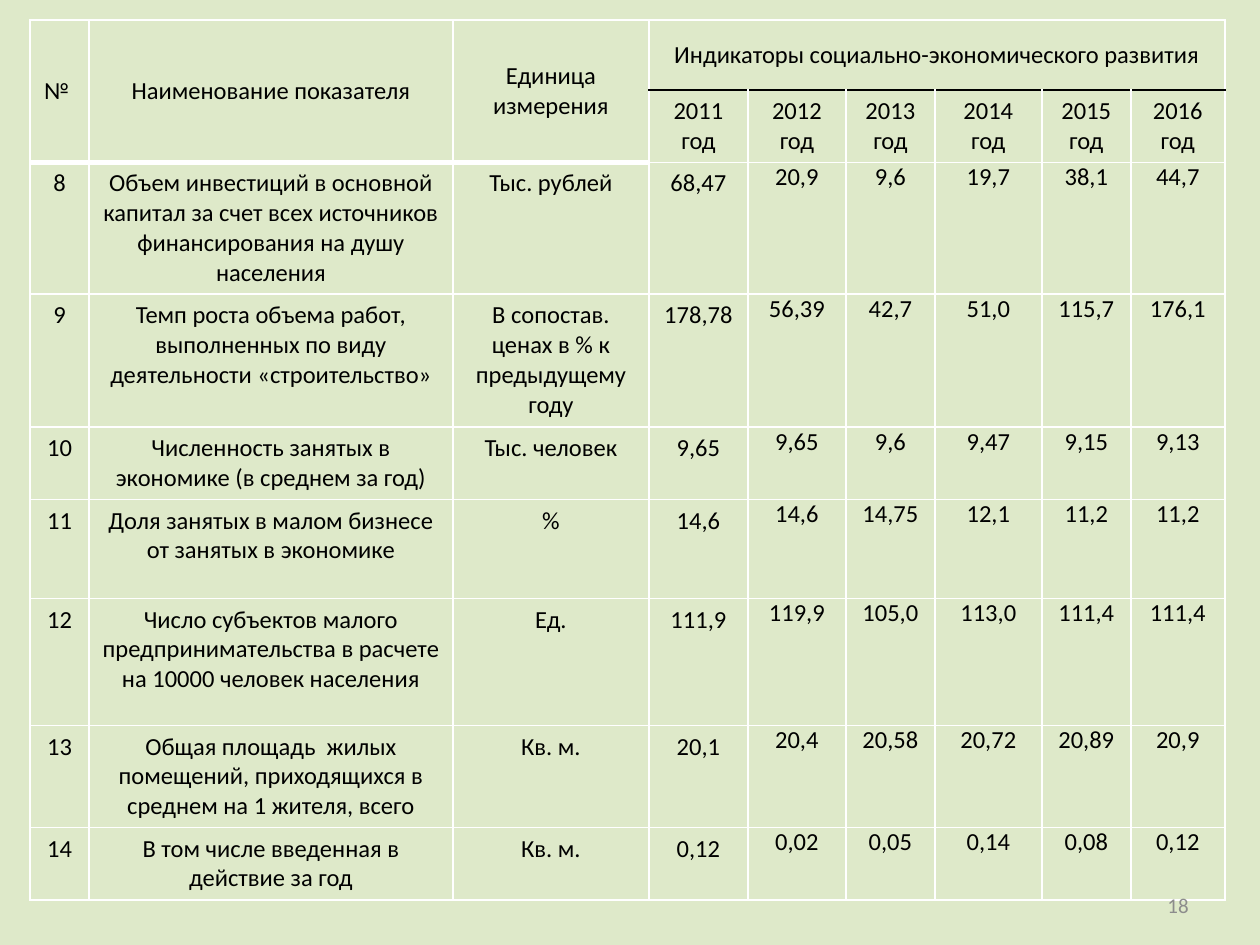
from lxml.etree import SubElement as Sub
from pptx import Presentation
from pptx.dml.color import RGBColor
from pptx.enum.text import MSO_ANCHOR as Anchor, PP_ALIGN as Align
from pptx.oxml.ns import qn
from pptx.util import Pt

PX = 914400 / 126
BACK, WHITE, BLACK, GREY = "DEE9C9", "FFFFFF", "000000", "8C8C8C"

HEADS = ["№ ", "Наименование показателя", "Единица измерения"]
GROUP = "Индикаторы социально-экономического развития"
YEARS = range(2011, 2017)
ROWS = [
    ("Объем инвестиций в основной капитал за счет всех источников "
     "финансирования на душу населения", "Тыс. рублей",
     "68,47 20,9 9,6 19,7 38,1 44,7"),
    ("Темп роста объема работ, выполненных по виду деятельности "
     "«строительство»", "В сопостав. ценах в % к предыдущему году",
     "178,78 56,39 42,7 51,0 115,7 176,1"),
    ("Численность занятых в экономике (в среднем за год)", "Тыс. человек",
     "9,65 9,65 9,6 9,47 9,15 9,13"),
    ("Доля занятых в малом бизнесе от занятых в экономике", "%",
     "14,6 14,6 14,75 12,1 11,2 11,2"),
    ("Число субъектов малого предпринимательства в расчете на 10000 "
     "человек населения", "Ед.", "111,9 119,9 105,0 113,0 111,4 111,4"),
    ("Общая площадь  жилых помещений, приходящихся в среднем на 1 жителя, "
     "всего", "Кв. м.", "20,1 20,4 20,58 20,72 20,89 20,9"),
    ("В том числе введенная в действие за год", "Кв. м.",
     "0,12 0,02 0,05 0,14 0,08 0,12"),
]
FIRST = 8
WIDTHS = [59, 364, 196, 99, 98, 89, 107, 89, 94]
HEIGHTS = [70, 72, 131, 133, 72, 99, 127, 102, 72]
LEFT, TOP = 30, 20


def px(n):
    return round(n * PX)


def color(code):
    return RGBColor.from_string(code)


def write(frame, text, size, code, align):
    para = frame.paragraphs[0]
    para.text = text
    para.alignment = align
    para.font.size = Pt(size)
    para.font.name = "Calibri"
    para.font.color.rgb = color(code)


def border(cell, side, code=WHITE, width=1):
    line = Sub(cell._tc.get_or_add_tcPr(), qn(f"a:ln{side}"), w=str(Pt(width)))
    Sub(Sub(line, qn("a:solidFill")), qn("a:srgbClr"), val=code)


def style(cell, row, col):
    """Draw the four borders, then clear the fill."""
    head, year = row < 2, col >= len(HEADS)
    border(cell, "L")
    border(cell, "R")
    border(cell, "T", BLACK if row == 1 and year else WHITE)
    border(cell, "B", BLACK if row == 0 and year else WHITE,
           3 if row == 0 and not year else 1)
    cell.fill.background()
    if not head and col > len(HEADS):
        cell.margin_left = cell.margin_right = px(9)
        cell.margin_top = cell.margin_bottom = 0
    if row == 0:
        cell.vertical_anchor = Anchor.MIDDLE


def build():
    deck = Presentation()
    deck.slide_width, deck.slide_height = px(1260), px(945)
    slide = deck.slides.add_slide(deck.slide_layouts[6])
    fill = slide.background.fill
    fill.solid()
    fill.fore_color.rgb = color(BACK)

    grid = [HEADS + [GROUP] + [""] * (len(YEARS) - 1),
            [""] * len(HEADS) + [f"{year} год" for year in YEARS]]
    grid += [[str(num), name, unit, *values.split()]
             for num, (name, unit, values) in enumerate(ROWS, FIRST)]

    table = slide.shapes.add_table(
        len(HEIGHTS), len(WIDTHS), px(LEFT), px(TOP),
        px(sum(WIDTHS)), px(sum(HEIGHTS))).table
    table.first_row = table.horz_banding = False
    for col, width in zip(table.columns, WIDTHS):
        col.width = px(width)
    for row, height in zip(table.rows, HEIGHTS):
        row.height = px(height)

    for col in range(len(HEADS)):
        table.cell(0, col).merge(table.cell(1, col))
    table.cell(0, len(HEADS)).merge(table.cell(0, len(WIDTHS) - 1))
    for r, texts in enumerate(grid):
        for c, text in enumerate(texts):
            cell = table.cell(r, c)
            style(cell, r, c)
            if not cell.is_spanned:
                write(cell.text_frame, text, 14, BLACK, Align.CENTER)

    box = slide.shapes.add_textbox(px(1096), px(880), px(105), px(50))
    frame = box.text_frame
    frame.word_wrap = True
    frame.vertical_anchor = Anchor.MIDDLE
    write(frame, "18", 12, GREY, Align.RIGHT)
    deck.save("out.pptx")


if __name__ == "__main__":
    build()
